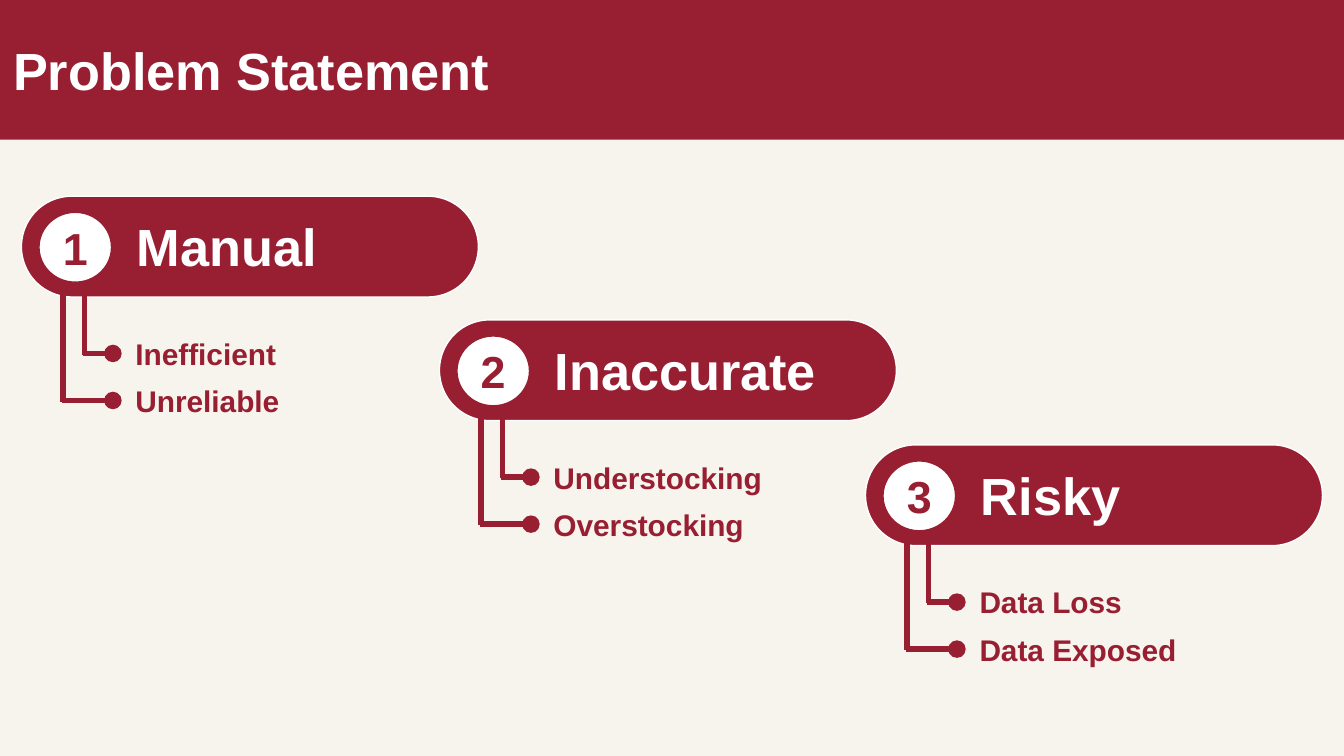
from lxml import etree
from pptx import Presentation
from pptx.dml.color import RGBColor
from pptx.enum import shapes, text
from pptx.oxml import ns
from pptx.util import Inches, Pt

COLORS = {"crimson": "981E32", "white": "FFFFFF", "cream": "F7F4ED"}
FONT = "Arial"

PROBLEMS = [
    (0.16, 1.46, "Manual", ["Inefficient", "Unreliable"]),
    (3.27, 2.38, "Inaccurate", ["Understocking", "Overstocking"]),
    (6.44, 3.31, "Risky", ["Data Loss", "Data Exposed"]),
]
STEMS = [(0.47, 1.17), (0.31, 1.52)]


def rgb(name):
    return RGBColor.from_string(COLORS[name])


def write(sp, content, size=16, color="crimson", align=text.PP_ALIGN.LEFT,
          inset=0.1, wrap=True):
    tf = sp.text_frame
    tf.word_wrap = wrap
    tf.vertical_anchor = text.MSO_ANCHOR.MIDDLE
    tf.margin_left = tf.margin_right = Inches(inset)
    tf.margin_top = tf.margin_bottom = Inches(inset)
    p = tf.paragraphs[0]
    p.alignment = align
    r = p.add_run()
    r.text = content
    r.font.name = FONT
    r.font.size = Pt(size)
    r.font.bold = True
    r.font.color.rgb = rgb(color)


class Deck:
    def __init__(self, width):
        self.prs = Presentation()
        self.prs.slide_width = Inches(width)
        self.prs.slide_height = Inches(width * 9 / 16)
        self.s = None

    def add_slide(self, background):
        self.s = self.prs.slides.add_slide(self.prs.slide_layouts[6])
        self.s.background.fill.solid()
        self.s.background.fill.fore_color.rgb = rgb(background)

    def shape(self, kind, x, y, w, h, fill="crimson", line=None):
        sp = self.s.shapes.add_shape(
            kind, Inches(x), Inches(y), Inches(w), Inches(h))
        sp.shadow.inherit = False
        sp.fill.solid()
        sp.fill.fore_color.rgb = rgb(fill)
        if line:
            sp.line.color.rgb = rgb(line)
            sp.line.width = Pt(0.75)
        else:
            sp.line.fill.background()
        return sp

    def label(self, x, y, w, h, content, **style):
        sp = self.s.shapes.add_textbox(
            Inches(x), Inches(y), Inches(w), Inches(h))
        write(sp, content, **style)

    def line(self, x1, y1, x2, y2):
        sp = self.s.shapes.add_connector(
            shapes.MSO_CONNECTOR.STRAIGHT,
            Inches(x1), Inches(y1), Inches(x2), Inches(y2))
        sp.line.color.rgb = rgb("crimson")
        sp.line.width = Pt(3)
        etree.SubElement(sp._element.spPr, ns.qn("a:effectLst"))

    def pill(self, x, y, number, heading):
        kinds = shapes.MSO_SHAPE
        sp = self.shape(kinds.ROUNDED_RECTANGLE, x, y, 3.4, 0.75, line="white")
        sp.adjustments[0] = 0.5
        sp = self.shape(kinds.OVAL, x + 0.13, y + 0.12, 0.54, 0.52,
                        fill="white", line="crimson")
        write(sp, str(number), size=24, align=text.PP_ALIGN.CENTER,
              inset=0, wrap=False)
        self.label(x + 0.76, y + 0.11, 2.33, 0.52, heading,
                   size=28, color="white")

    def branch(self, x, top, stem, drop, content):
        y = top + drop
        self.line(x + stem, top + 0.73, x + stem, y + 0.01)
        self.line(x + 0.65, y, x + stem - 0.01, y)
        self.shape(shapes.MSO_SHAPE.FLOWCHART_CONNECTOR,
                   x + 0.62, y - 0.06, 0.12, 0.12, line="crimson")
        self.label(x + 0.75, y - 0.23, 2.2, 0.46, content)


def main():
    deck = Deck(10)
    deck.add_slide("cream")
    banner = deck.shape(shapes.MSO_SHAPE.RECTANGLE, 0, 0, 10, 1.04)
    write(banner, "Problem Statement", size=28, color="white")
    for number, (x, y, heading, effects) in enumerate(PROBLEMS, 1):
        deck.pill(x, y, number, heading)
        for (stem, drop), effect in zip(STEMS, effects):
            deck.branch(x, y, stem, drop, effect)
    deck.prs.save("out.pptx")


if __name__ == "__main__":
    main()
